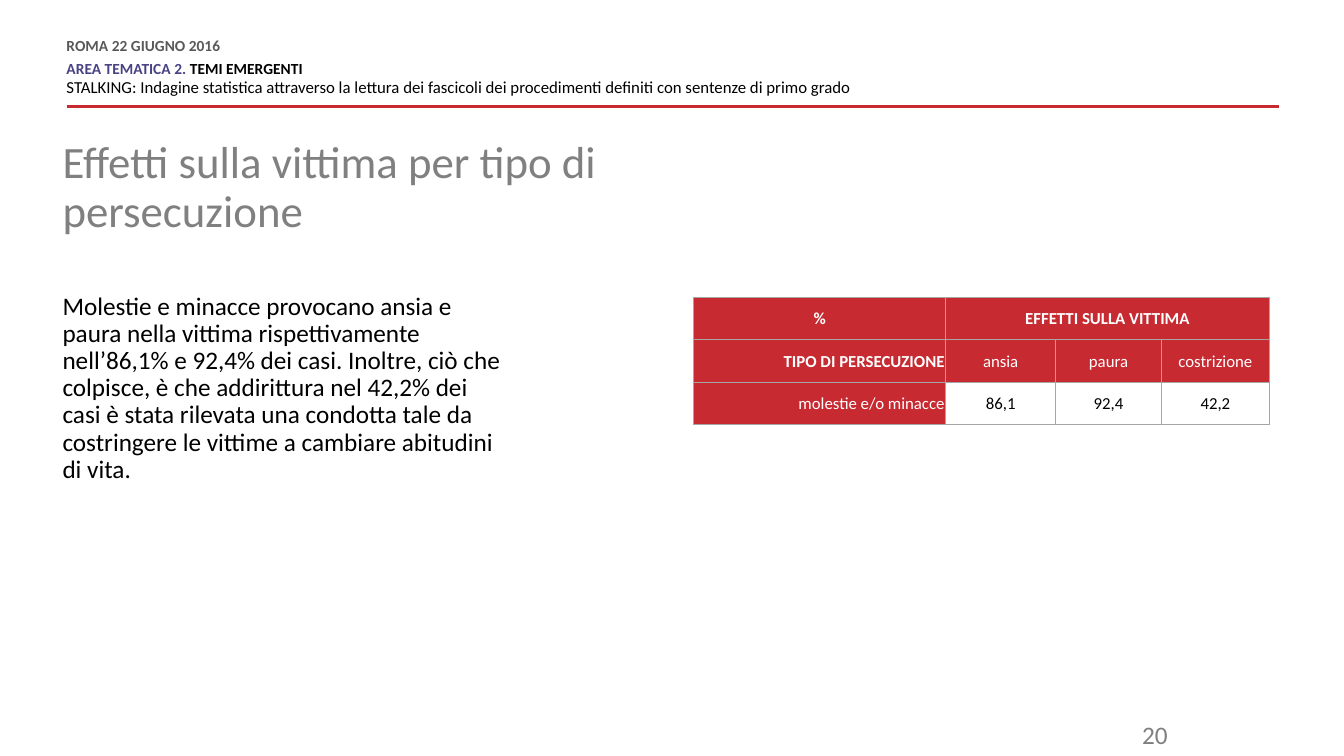
from dataclasses import dataclass

from lxml.etree import SubElement
from pptx import Presentation
from pptx.dml.color import RGBColor
from pptx.enum.shapes import MSO_CONNECTOR
from pptx.enum.text import MSO_ANCHOR, MSO_AUTO_SIZE, PP_ALIGN
from pptx.oxml import parse_xml
from pptx.oxml.ns import nsdecls, qn
from pptx.util import Pt

PX = 9144


@dataclass(frozen=True)
class Theme:
    font: str = "Calibri"
    red: str = "C72A31"
    violet: str = "484384"
    black: str = "000000"
    white: str = "FFFFFF"
    dark_gray: str = "595959"
    title_gray: str = "808080"
    number_gray: str = "7F7F7F"
    border: str = "A6A6A6"
    title_size: int = 32
    body_size: int = 18
    small_size: int = 12
    header_size: int = 11


T = Theme()


def rgb(color):
    return RGBColor.from_string(color)


def place(sp, left, top, width, height):
    sp.left, sp.top, sp.width, sp.height = (
        v * PX for v in (left, top, width, height))


def setup_frame(tf, margin=0):
    tf.word_wrap = True
    tf.auto_size = MSO_AUTO_SIZE.NONE
    tf.vertical_anchor = MSO_ANCHOR.TOP
    tf.margin_left = tf.margin_right = margin * PX
    tf.margin_top = tf.margin_bottom = margin // 2 * PX


def format_paragraph(p, align=PP_ALIGN.LEFT, spacing=None, before=0, after=0):
    p.alignment = align
    p.line_spacing = spacing
    p.space_before, p.space_after = Pt(before), Pt(after)


def add_run(p, text, size=T.small_size, color=T.black, bold=False):
    r = p.add_run()
    r.text = text
    r.font.name, r.font.size, r.font.bold = T.font, Pt(size), bold
    r.font.color.rgb = rgb(color)


def fill_placeholder(sp, text, box, size, color):
    place(sp, *box)
    setup_frame(sp.text_frame)
    p = sp.text_frame.paragraphs[0]
    pPr = p._p.get_or_add_pPr()
    pPr.set("marL", "0")
    pPr.set("indent", "0")
    SubElement(pPr, qn("a:buNone"))
    format_paragraph(p, spacing=0.9)
    add_run(p, text, size, color)


def add_header(s):
    tf = s.shapes.add_textbox(66 * PX, 39 * PX, 834 * PX, 59 * PX).text_frame
    setup_frame(tf)
    size = T.header_size
    lines = [
        ([("ROMA 22 GIUGNO 2016", size, T.dark_gray, True)], 0, 6),
        ([("AREA TEMATICA 2. ", size, T.violet, True),
          ("TEMI EMERGENTI", size, T.black, True)], 0, 0),
        ([("STALKING: Indagine statistica attraverso la lettura dei fascicoli "
           "dei procedimenti definiti con sentenze di primo grado",)], 3, 6),
    ]
    for i, (runs, before, after) in enumerate(lines):
        p = tf.add_paragraph() if i else tf.paragraphs[0]
        format_paragraph(p, spacing=Pt(10.8), before=before, after=after)
        for run in runs:
            add_run(p, *run)


def add_rule(s, x1, x2, y):
    cx = s.shapes.add_connector(
        MSO_CONNECTOR.STRAIGHT, x1 * PX, y * PX, x2 * PX, y * PX)
    cx.line.color.rgb = rgb(T.red)
    cx.line.width = Pt(2)
    SubElement(cx._element.spPr, qn("a:effectLst"))


def add_page_number(s, text):
    tf = s.shapes.add_textbox(1050 * PX, 709 * PX, 118 * PX, 35 * PX).text_frame
    setup_frame(tf, margin=10)
    p = tf.paragraphs[0]
    format_paragraph(p, align=PP_ALIGN.RIGHT)
    add_run(p, text, T.body_size, T.number_gray)


def add_borders(cell):
    tcPr = cell._tc.get_or_add_tcPr()
    for i, side in enumerate(("lnL", "lnR", "lnT", "lnB")):
        tcPr.insert(i, parse_xml(
            f'<a:{side} {nsdecls("a")} w="{Pt(0.75)}"><a:solidFill>'
            f'<a:srgbClr val="{T.border}"/></a:solidFill></a:{side}>'))


def format_cell(cell, text, fill, color, bold, align):
    cell.fill.solid()
    cell.fill.fore_color.rgb = rgb(fill)
    cell.vertical_anchor = MSO_ANCHOR.MIDDLE
    cell.margin_left = cell.margin_right = cell.margin_top = PX
    cell.margin_bottom = 0
    p = cell.text_frame.paragraphs[0]
    format_paragraph(p, align=align)
    if text:
        add_run(p, text, color=color, bold=bold)
    add_borders(cell)


def add_effects_table(s):
    rows = [
        ("%", "EFFETTI SULLA VITTIMA", "", ""),
        ("TIPO DI PERSECUZIONE", "ansia", "paura", "costrizione"),
        ("molestie e/o minacce", "86,1", "92,4", "42,2"),
    ]
    widths, row_height = (250, 109, 105, 107), 42
    table = s.shapes.add_table(
        len(rows), len(widths), 688 * PX, 295 * PX,
        sum(widths) * PX, len(rows) * row_height * PX).table
    for column, width in zip(table.columns, widths):
        column.width = width * PX
    for i, row in enumerate(rows):
        table.rows[i].height = row_height * PX
        for j, text in enumerate(row):
            is_value = i == 2 and j > 0
            format_cell(
                table.cell(i, j), text,
                fill=T.white if is_value else T.red,
                color=T.black if is_value else T.white,
                bold=i == 0 or (i == 1 and j == 0),
                align=PP_ALIGN.RIGHT if i and j == 0 else PP_ALIGN.CENTER)
    table.cell(0, 1).merge(table.cell(0, 3))


def main():
    prs = Presentation()
    prs.slide_width, prs.slide_height = 1333 * PX, 750 * PX
    s = prs.slides.add_slide(prs.slide_layouts[1])
    add_rule(s, 66, 1269, 106)
    add_header(s)
    fill_placeholder(
        s.shapes.title, "Effetti sulla vittima per tipo di persecuzione",
        (62, 139, 555, 113), T.title_size, T.title_gray)
    fill_placeholder(
        s.placeholders[1],
        "Molestie e minacce provocano ansia e paura nella vittima "
        "rispettivamente nell’86,1% e 92,4% dei casi. Inoltre, ciò che "
        "colpisce, è che addirittura nel 42,2% dei casi è stata rilevata una "
        "condotta tale da costringere le vittime a cambiare abitudini di vita.",
        (62, 291, 445, 334), T.body_size, T.black)
    add_effects_table(s)
    add_page_number(s, "20")
    prs.save("out.pptx")


if __name__ == "__main__":
    main()
